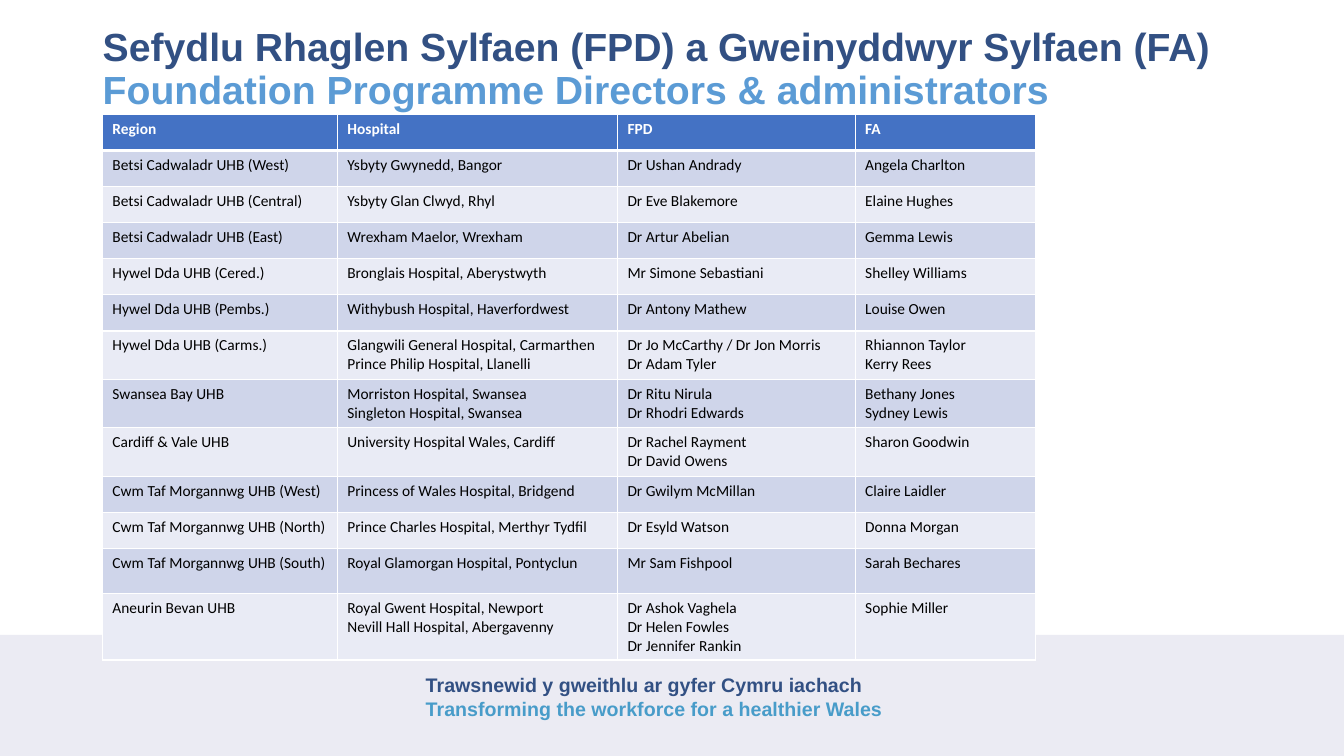
"""Build the slide of foundation programme directors and administrators."""
import pptx
import pptx.dml.color
import pptx.enum.shapes
import pptx.enum.text
import pptx.oxml
import pptx.oxml.ns
import pptx.util

Cm = pptx.util.Cm
Pt = pptx.util.Pt
RGBColor = pptx.dml.color.RGBColor
Anchor = pptx.enum.text.MSO_ANCHOR

NAVY = RGBColor(0x32, 0x50, 0x83)
SKY = RGBColor(0x5B, 0x9B, 0xD5)
TEAL = RGBColor(0x48, 0x9C, 0xC9)
BLUE = RGBColor(0x44, 0x72, 0xC4)
DARK = RGBColor(0xCF, 0xD5, 0xEA)
LIGHT = RGBColor(0xE9, 0xEB, 0xF5)
MIST = RGBColor(0xEB, 0xEB, 0xF3)
BLACK = RGBColor(0, 0, 0)
WHITE = RGBColor(255, 255, 255)

TITLE = [
    ("Sefydlu Rhaglen Sylfaen (FPD) a Gweinyddwyr Sylfaen (FA)", NAVY),
    ("Foundation Programme Directors & administrators", SKY),
]
MOTTO = [
    ("Trawsnewid y gweithlu ar gyfer Cymru iachach", NAVY),
    ("Transforming the workforce for a healthier Wales", TEAL),
]
WIDTHS = [5.92, 7.06, 5.99, 4.55]
ROWS = [
    (0.91, "Region", "Hospital", "FPD", "FA"),
    (0.91, "Betsi Cadwaladr UHB (West)", "Ysbyty Gwynedd, Bangor",
     "Dr Ushan Andrady", "Angela Charlton"),
    (0.91, "Betsi Cadwaladr UHB (Central)", "Ysbyty Glan Clwyd, Rhyl",
     "Dr Eve Blakemore", "Elaine Hughes"),
    (0.91, "Betsi Cadwaladr UHB (East)", "Wrexham Maelor, Wrexham",
     "Dr Artur Abelian", "Gemma Lewis"),
    (0.91, "Hywel Dda UHB (Cered.)", "Bronglais Hospital, Aberystwyth",
     "Mr Simone Sebastiani", "Shelley Williams"),
    (0.91, "Hywel Dda UHB (Pembs.)", "Withybush Hospital, Haverfordwest",
     "Dr Antony Mathew", "Louise Owen"),
    (1.22, "Hywel Dda UHB (Carms.)",
     "Glangwili General Hospital, Carmarthen\nPrince Philip Hospital, Llanelli",
     "Dr Jo McCarthy / Dr Jon Morris\nDr Adam Tyler",
     "Rhiannon Taylor\nKerry Rees"),
    (1.22, "Swansea Bay UHB",
     "Morriston Hospital, Swansea\nSingleton Hospital, Swansea",
     "Dr Ritu Nirula\nDr Rhodri Edwards", "Bethany Jones\nSydney Lewis"),
    (1.22, "Cardiff & Vale UHB", "University Hospital Wales, Cardiff",
     "Dr Rachel Rayment\nDr David Owens", "Sharon Goodwin"),
    (0.91, "Cwm Taf Morgannwg UHB (West)",
     "Princess of Wales Hospital, Bridgend",
     "Dr Gwilym McMillan", "Claire Laidler"),
    (0.91, "Cwm Taf Morgannwg UHB (North)",
     "Prince Charles Hospital, Merthyr Tydfil",
     "Dr Esyld Watson", "Donna Morgan"),
    (1.13, "Cwm Taf Morgannwg UHB (South)",
     "Royal Glamorgan Hospital, Pontyclun",
     "Mr Sam Fishpool", "Sarah Bechares"),
    (1.68, "Aneurin Bevan UHB",
     "Royal Gwent Hospital, Newport\nNevill Hall Hospital, Abergavenny",
     "Dr Ashok Vaghela\nDr Helen Fowles\nDr Jennifer Rankin",
     "Sophie Miller"),
]


def add_run(para, text, size, color, face="Arial", bold=True):
    run = para.add_run()
    run.text = text
    font = run.font
    font.name, font.size, font.bold = face, Pt(size), bold
    font.color.rgb = color


def add_box(slide, *place):
    frame = slide.shapes.add_textbox(*map(Cm, place)).text_frame
    frame.word_wrap = True
    return frame


def add_edges(cell, top, base):
    props = cell._tc.get_or_add_tcPr()
    for side, width in zip("LRTB", (1, 1, top, base)):
        props.append(pptx.oxml.parse_xml(
            f'<a:ln{side} {pptx.oxml.ns.nsdecls("a")} w="{Pt(width)}">'
            f'<a:solidFill><a:srgbClr val="{WHITE}"/></a:solidFill></a:ln{side}>'))


def fill_cell(cell, text, row):
    head = row == 0
    add_edges(cell, 3 if row == 1 else 1, 3 if head else 1)
    cell.fill.solid()
    cell.fill.fore_color.rgb = BLUE if head else DARK if row % 2 else LIGHT
    frame = cell.text_frame
    for i, line in enumerate(text.split("\n")):
        para = frame.add_paragraph() if i else frame.paragraphs[0]
        add_run(para, line, 11, WHITE if head else BLACK, "Calibri", head)


def add_grid(slide):
    high = sum(row[0] for row in ROWS)
    shape = slide.shapes.add_table(
        len(ROWS), len(WIDTHS), Cm(2.58), Cm(2.88), Cm(sum(WIDTHS)), Cm(high))
    table = shape.table
    table.horz_banding = False
    for col, width in zip(table.columns, WIDTHS):
        col.width = Cm(width)
    for r, (height, *texts) in enumerate(ROWS):
        table.rows[r].height = Cm(height)
        for c, text in enumerate(texts):
            fill_cell(table.cell(r, c), text, r)


def main():
    deck = pptx.Presentation()
    deck.slide_width, deck.slide_height = Cm(33.87), Cm(19.05)
    slide = deck.slides.add_slide(deck.slide_layouts[6])

    band = slide.shapes.add_shape(
        pptx.enum.shapes.MSO_SHAPE.RECTANGLE, 0, Cm(16), Cm(33.87), Cm(3.05))
    band.shadow.inherit = False
    band.fill.solid()
    band.fill.fore_color.rgb = MIST
    band.line.fill.background()

    motto = add_box(slide, 10.48, 16.84, 12.7, 1.45)
    for i, (text, color) in enumerate(MOTTO):
        para = motto.add_paragraph() if i else motto.paragraphs[0]
        add_run(para, text, 14, color)

    title = add_box(slide, 2.34, 0.43, 28.98, 2.69)
    title.vertical_anchor = Anchor.MIDDLE
    para = title.paragraphs[0]
    para.line_spacing = 0.9
    for i, (text, color) in enumerate(TITLE):
        if i:
            para.add_line_break()
        add_run(para, text, 28, color)

    add_grid(slide)
    deck.save("out.pptx")


if __name__ == "__main__":
    main()
